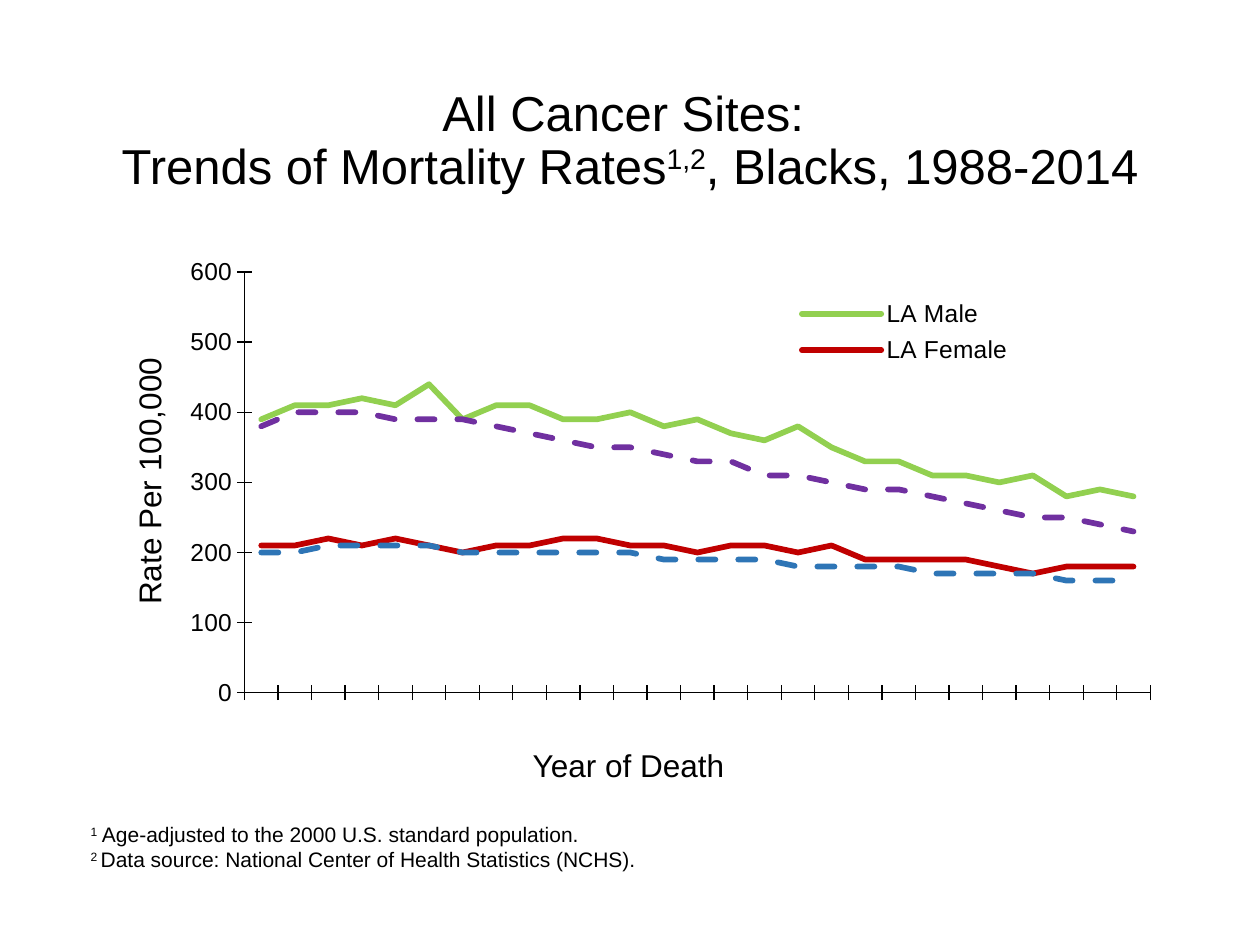
from lxml import etree
from pptx import Presentation
from pptx.chart.data import CategoryChartData
from pptx.dml.color import RGBColor
from pptx.enum.chart import XL_CHART_TYPE, XL_LEGEND_POSITION, XL_TICK_LABEL_POSITION, XL_TICK_MARK
from pptx.enum.dml import MSO_LINE
from pptx.enum.text import MSO_ANCHOR, PP_ALIGN
from pptx.oxml.ns import qn
from pptx.util import Inches, Pt

CENTER, LEFT = PP_ALIGN.CENTER, PP_ALIGN.LEFT
SOLID, DASH = MSO_LINE.SOLID, MSO_LINE.DASH
CROSS = XL_TICK_MARK.CROSS
NO_LABELS = XL_TICK_LABEL_POSITION.NONE
FONT = "Arial"
COLORS = {"text": "000000", "LA Male": "92D050", "LA Female": "C00000",
          "US Male": "7030A0", "US Female": "2E75B6"}

WIDTH, HEIGHT = 10, 7.5
TITLE = [[("All Cancer Sites: \nTrends of Mortality Rates", False),
          ("1,2", True), (", Blacks, 1988-2014", False)]]
YEAR_TITLE = [[("Year of Death", False)]]
RATE_TITLE = [[("Rate Per 100,000", False)]]
FOOTNOTES = [
    [("1", True), (" Age-adjusted to the 2000 U.S. standard population.", False)],
    [("2 ", True), ("Data source: National Center of Health Statistics (NCHS).", False)],
]
YEARS = [str(year) for year in range(1988, 2015)]
RATES = {
    "LA Male": [390, 410, 410, 420, 410, 440, 390, 410, 410, 390, 390, 400, 380, 390,
                370, 360, 380, 350, 330, 330, 310, 310, 300, 310, 280, 290, 280],
    "LA Female": [210, 210, 220, 210, 220, 210, 200, 210, 210, 220, 220, 210, 210, 200,
                  210, 210, 200, 210, 190, 190, 190, 190, 180, 170, 180, 180, 180],
    "US Male": [380, 400, 400, 400, 390, 390, 390, 380, 370, 360, 350, 350, 340, 330,
                330, 310, 310, 300, 290, 290, 280, 270, 260, 250, 250, 240, 230],
    "US Female": [200, 200, 210, 210, 210, 210, 200, 200, 200, 200, 200, 200, 190, 190,
                  190, 190, 180, 180, 180, 180, 170, 170, 170, 170, 160, 160, 160],
}
UNLISTED = [2, 3]
CHART_PLACE = (1.32, 2, 8, 3.87)
PLOT_PLACE = (1.94, 2.16, 7.19, 3.34)
LEGEND_PLACE = (6.14, 2.31, 2.08, 0.65)


def style_font(font, size):
    font.name = FONT
    font.size = Pt(size)
    font.color.rgb = RGBColor.from_string(COLORS["text"])


def add_text(slide, place, paragraphs, size, align=LEFT, wrap=False, spacing=1, rotation=0):
    box = slide.shapes.add_textbox(*map(Inches, place))
    box.rotation = rotation
    frame = box.text_frame
    frame.word_wrap = wrap
    frame.vertical_anchor = MSO_ANCHOR.MIDDLE
    for index, parts in enumerate(paragraphs):
        paragraph = frame.add_paragraph() if index else frame.paragraphs[0]
        paragraph.alignment = align
        paragraph.line_spacing = spacing
        for text, raised in parts:
            if not paragraph.runs:
                paragraph.text = text
            else:
                paragraph.add_run().text = text
            if raised:
                paragraph.runs[-1].font._element.set("baseline", "30000")
        for run in paragraph.runs:
            style_font(run.font, size)


def make_layout(place, inner=False):
    left, top, width, height = CHART_PLACE
    x, y, w, h = place
    shares = ((x - left) / width, (y - top) / height, w / width, h / height)
    layout = etree.Element(qn("c:layout"))
    manual = etree.SubElement(layout, qn("c:manualLayout"))
    settings = [("layoutTarget", "inner")] if inner else []
    settings += [("xMode", "edge"), ("yMode", "edge")]
    settings += zip("xywh", map(str, shares))
    for tag, value in settings:
        etree.SubElement(manual, qn("c:" + tag)).set("val", value)
    return layout


def replace_layout(parent, layout, position):
    for old in parent.findall(qn("c:layout")):
        parent.remove(old)
    parent.insert(position, layout)


def add_rates_chart(slide):
    data = CategoryChartData()
    data.categories = YEARS
    for name, values in RATES.items():
        data.add_series(name, values)
    place = map(Inches, CHART_PLACE)
    chart = slide.shapes.add_chart(XL_CHART_TYPE.LINE, *place, data).chart
    chart.has_title = False
    style_font(chart.font, 14)
    chart.plots[0].vary_by_categories = False

    for series in chart.plots[0].series:
        series.smooth = False
        line = series.format.line
        line.color.rgb = RGBColor.from_string(COLORS[series.name])
        line.width = Pt(3.25)
        line.dash_style = DASH if series.name.startswith("US") else SOLID
        line._ln.set("cap", "rnd")

    for axis in (chart.category_axis, chart.value_axis):
        axis.has_major_gridlines = False
        axis.major_tick_mark = CROSS
        axis.format.line.color.rgb = RGBColor.from_string(COLORS["text"])
        axis.format.line.width = Pt(0.75)
        style_font(axis.tick_labels.font, 14)
    chart.category_axis.tick_label_position = NO_LABELS
    rates = chart.value_axis
    rates.minimum_scale, rates.maximum_scale, rates.major_unit = 0, 600, 100

    chart.has_legend = True
    legend = chart.legend
    legend.position = XL_LEGEND_POSITION.BOTTOM
    legend.include_in_layout = False
    style_font(legend.font, 14)
    for order, index in enumerate(UNLISTED, 1):
        entry = etree.Element(qn("c:legendEntry"))
        etree.SubElement(entry, qn("c:idx")).set("val", str(index))
        etree.SubElement(entry, qn("c:delete")).set("val", "1")
        legend._element.insert(order, entry)
    replace_layout(legend._element, make_layout(LEGEND_PLACE), 1 + len(UNLISTED))
    plot_area = chart._chartSpace.chart.plotArea
    replace_layout(plot_area, make_layout(PLOT_PLACE, inner=True), 0)


def main():
    deck = Presentation()
    deck.slide_width, deck.slide_height = Inches(WIDTH), Inches(HEIGHT)
    slide = deck.slides.add_slide(deck.slide_layouts[6])
    add_text(slide, (0.69, 0.4, 8.62, 1.45), TITLE, 28, CENTER, wrap=True, spacing=0.9)
    add_text(slide, (4.13, 5.87, 1.74, 0.4), YEAR_TITLE, 18)
    add_text(slide, (0.09, 3.62, 2.18, 0.4), RATE_TITLE, 18, CENTER, rotation=270)
    add_text(slide, (0.62, 6.47, 4.58, 0.5), FOOTNOTES, 12)
    add_rates_chart(slide)
    deck.save("out.pptx")


if __name__ == "__main__":
    main()
